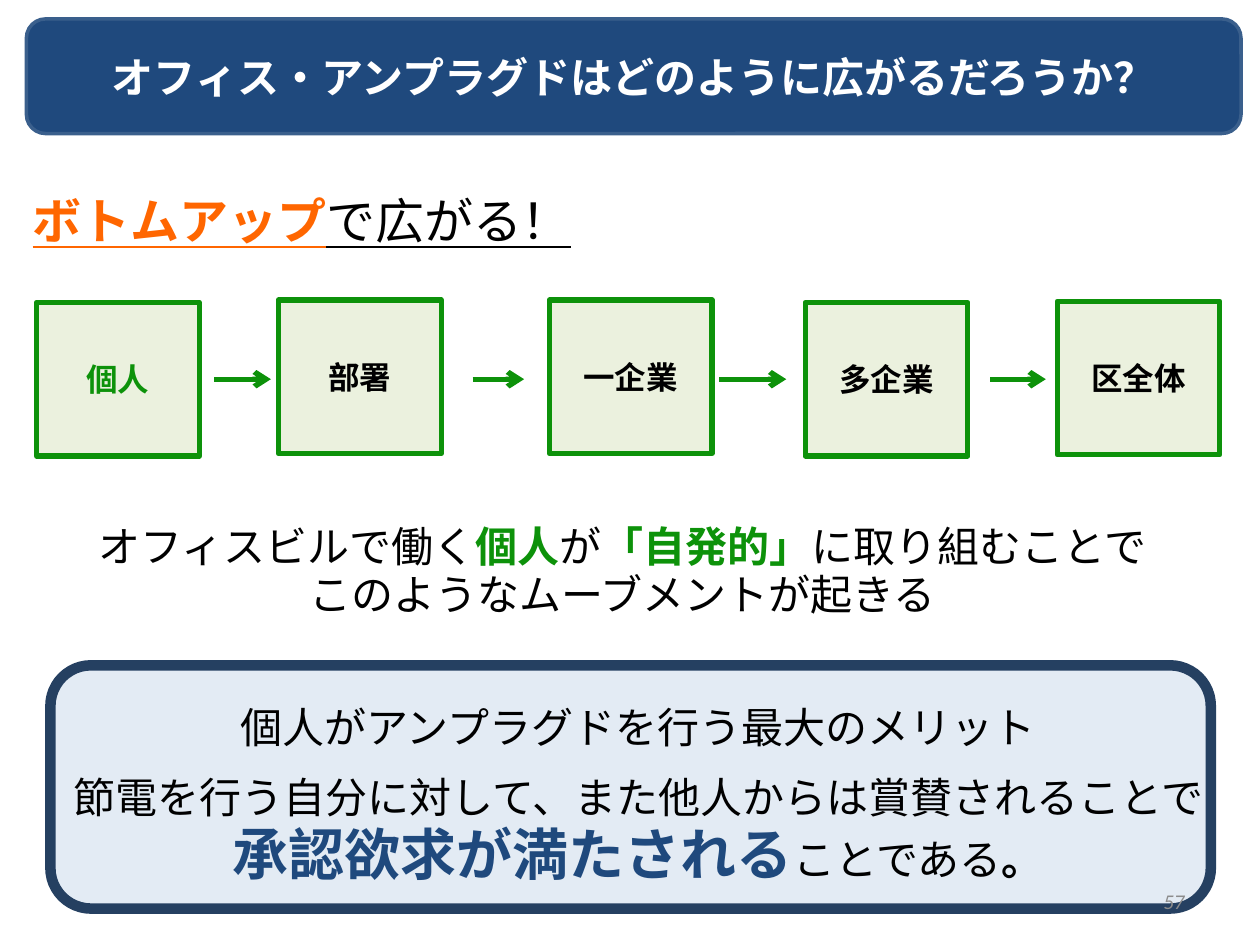
import pptx
import pptx.util
import pptx.dml.color
import pptx.oxml.ns
import lxml.etree
from pptx.enum.shapes import MSO_CONNECTOR, MSO_SHAPE
from pptx.enum.text import MSO_ANCHOR, PP_ALIGN

Pt = pptx.util.Pt
JAPANESE = "Noto Sans CJK JP"
BLACK, WHITE, NAVY = "000000", "FFFFFF", "1F497D"
GREEN, PALE_GREEN, ORANGE = "0D920A", "EBF1DE", "FF6600"


def color(hex_value):
    return pptx.dml.color.RGBColor.from_string(hex_value)


def add_child(parent, tag, **attributes):
    child = lxml.etree.SubElement(parent, pptx.oxml.ns.qn(tag))
    for name, value in attributes.items():
        child.set(name, value)
    return child


def add_run(paragraph, text, size, hex_value=BLACK, bold=False, underline=False,
            italic=False, font=JAPANESE):
    run = paragraph.add_run()
    run.text = text
    run.font.size = Pt(size)
    run.font.bold = bold
    run.font.italic = italic
    run.font.underline = underline
    run.font.color.rgb = color(hex_value)
    run.font.name = font
    add_child(run.font._element, "a:ea", typeface=font)


def add_panel(slide, box, kind, fill, line=None, line_width=0):
    panel = slide.shapes.add_shape(kind, *map(Pt, box))
    panel.shadow.inherit = False
    panel.fill.solid()
    panel.fill.fore_color.rgb = color(fill)
    if line:
        panel.line.color.rgb = color(line)
        panel.line.width = Pt(line_width)
    else:
        panel.line.fill.background()
    return panel


def centered_line(panel):
    frame = panel.text_frame
    frame.vertical_anchor = MSO_ANCHOR.MIDDLE
    paragraph = frame.paragraphs[0]
    paragraph.alignment = PP_ALIGN.CENTER
    return paragraph


def add_lines(slide, box, lines, wrap=True):
    """Each line is (pitch, space before, runs)."""
    frame = slide.shapes.add_textbox(*map(Pt, box)).text_frame
    frame.word_wrap = wrap
    frame.margin_top = Pt(7.5)
    for index, (pitch, gap, runs) in enumerate(lines):
        paragraph = frame.add_paragraph() if index else frame.paragraphs[0]
        paragraph.alignment = PP_ALIGN.CENTER
        paragraph.line_spacing = Pt(pitch)
        paragraph.space_before = Pt(gap)
        for run in runs:
            add_run(paragraph, *run)


def add_banner(slide, box):
    banner = add_panel(slide, box, MSO_SHAPE.ROUNDED_RECTANGLE, NAVY, "3A5F8C", 2)
    add_run(centered_line(banner), "オフィス・アンプラグドはどのように広がるだろうか？",
            24, WHITE, bold=True)


def add_heading(slide, box):
    heading = centered_line(add_panel(slide, box, MSO_SHAPE.RECTANGLE, WHITE))
    add_run(heading, "ボトムアップ", 28, ORANGE, bold=True, underline=True)
    add_run(heading, "で広がる！", 28, underline=True)


def add_arrow(slide, start, end, y):
    arrow = slide.shapes.add_connector(MSO_CONNECTOR.STRAIGHT, Pt(start), Pt(y), Pt(end), Pt(y))
    arrow.line.color.rgb = color(GREEN)
    arrow.line.width = Pt(3)
    add_child(arrow.line._get_or_add_ln(), "a:tailEnd", type="arrow")
    add_child(arrow._element.spPr, "a:effectLst")


def add_spread_flow(slide, box):
    left, top, width, height = box
    # Stage name, offset from the left and top of the flow, text colour
    stages = [
        ("個人", 0, 1.4, GREEN),
        ("部署", 138.2, 0, BLACK),
        ("一企業", 293, 0, BLACK),
        ("多企業", 439.2, 1.4, BLACK),
        ("区全体", 583.2, 0.7, BLACK),
    ]
    for name, across, down, text_color in stages:
        stage_box = (left + across, top + down, 93, height)
        stage = add_panel(slide, stage_box, MSO_SHAPE.RECTANGLE, PALE_GREEN, GREEN, 3)
        add_run(centered_line(stage), name, 18, text_color, bold=True)
    for start, end in [(101.5, 133.9), (249.1, 278.6), (390.2, 428.4), (545, 576.7)]:
        add_arrow(slide, left + start, left + end, top + 45.3)


def add_explanation(slide, box):
    add_lines(slide, box, [
        (27.6, 0, [("オフィスビルで働く", 24), ("個人", 24, GREEN, True), ("が", 24),
                   ("「自発的」", 24, GREEN, True), ("に取り組むことで", 24)]),
        (27.6, 0, [("このようなムーブメントが起きる", 24)]),
    ])


def add_merit(slide, box):
    left, top, width, height = box
    panel = add_panel(slide, box, MSO_SHAPE.ROUNDED_RECTANGLE, "DCE6F2", "254061", 6)
    fill_color = panel._element.spPr.find(".//" + pptx.oxml.ns.qn("a:srgbClr"))
    add_child(fill_color, "a:alpha", val="79000")
    add_lines(slide, (left - 1.4, top + 14.4, 674.6, 145.4), [
        (27.6, 0, [("個人がアンプラグドを行う最大のメリット", 24)]),
        (27.6, 12.4, [("節電を行う自分に対して、また他人からは賞賛されることで", 24)]),
        (36.8, 0, [("承認欲求が満たされる", 32, NAVY, True), ("ことである", 24),
                   ("。", 24, BLACK, True)]),
    ], wrap=False)


def add_page_number(slide, box):
    frame = slide.shapes.add_textbox(*map(Pt, box)).text_frame
    frame.word_wrap = True
    frame.vertical_anchor = MSO_ANCHOR.MIDDLE
    frame.paragraphs[0].alignment = PP_ALIGN.RIGHT
    add_run(frame.paragraphs[0], "57", 12, "8C8C8C", italic=True, font="Calibri")


def main():
    deck = pptx.Presentation()
    deck.slide_width, deck.slide_height = Pt(720), Pt(540)
    slide = deck.slides.add_slide(deck.slide_layouts[6])
    add_banner(slide, (15.1, 10.8, 694.1, 65.5))
    add_heading(slide, (0, 104.4, 344.9, 42.5))
    add_spread_flow(slide, (20.9, 171.4, 676.2, 87.8))
    add_explanation(slide, (27.4, 290.9, 656.6, 65.5))
    add_merit(slide, (28.8, 380.2, 663.1, 139))
    add_page_number(slide, (516.2, 500.4, 167.8, 28.8))
    deck.save("out.pptx")


if __name__ == "__main__":
    main()
